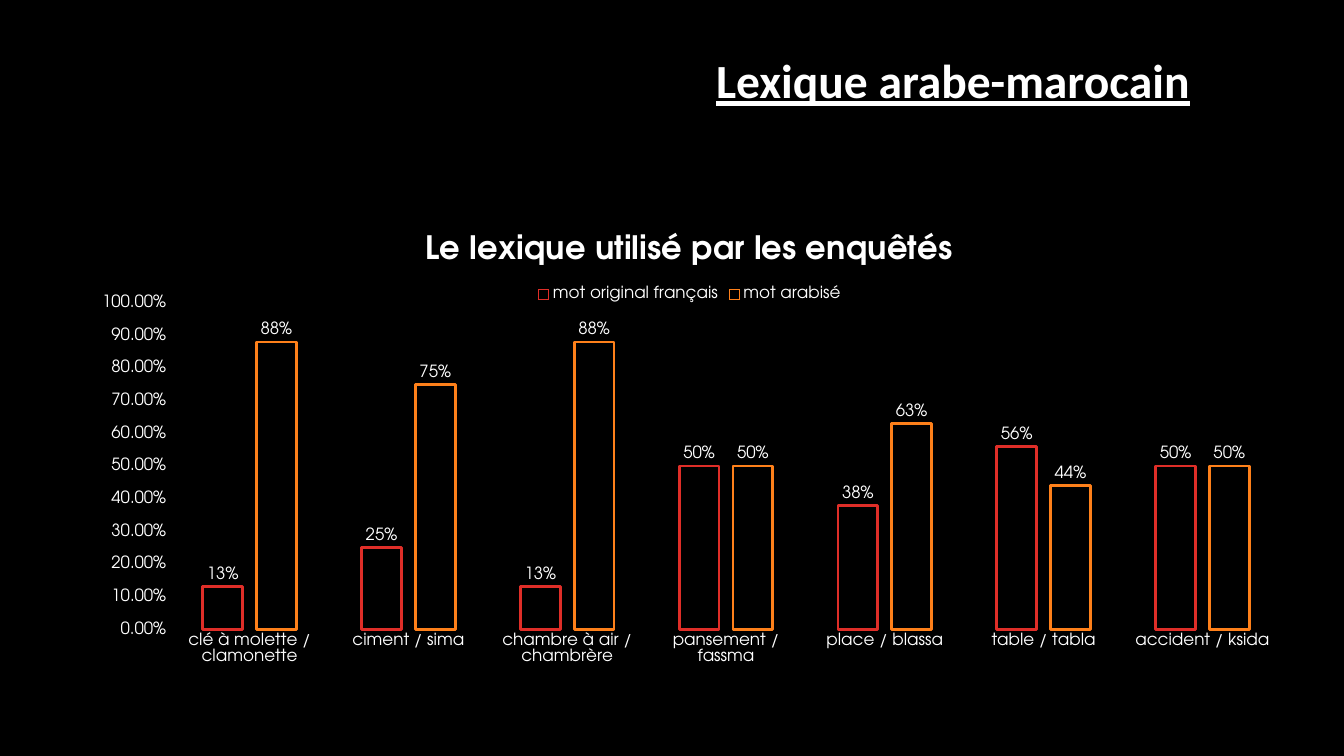
from dataclasses import dataclass

from lxml.etree import SubElement
from pptx import Presentation
from pptx.chart.data import CategoryChartData
from pptx.dml.color import RGBColor
from pptx.enum.chart import XL_CHART_TYPE as ChartType
from pptx.enum.chart import XL_LABEL_POSITION as LabelPosition
from pptx.enum.chart import XL_LEGEND_POSITION as LegendPosition
from pptx.enum.chart import XL_TICK_MARK as TickMark
from pptx.enum.text import PP_ALIGN as Align
from pptx.oxml.ns import qn
from pptx.util import Cm, Pt


@dataclass(frozen=True)
class Theme:
    background: str = "000000"
    text: str = "FFFFFF"
    french: str = "DF2E28"
    arabised: str = "FE801A"
    heading_font: str = "Calibri"
    chart_font: str = "TeX Gyre Adventor"
    heading_size: float = 34
    chart_title_size: float = 23
    label_size: float = 12
    outline: float = 2


THEME = Theme()

WORDS = [
    # word pair, share of French word, share of arabised word
    ("clé à molette / clamonette", 0.13, 0.88),
    ("ciment / sima", 0.25, 0.75),
    ("chambre à air / chambrère", 0.13, 0.88),
    ("pansement / fassma", 0.5, 0.5),
    ("place / blassa", 0.38, 0.63),
    ("table / tabla", 0.56, 0.44),
    ("accident / ksida", 0.5, 0.5),
]


def format_font(font, size, name=THEME.chart_font, bold=False, underline=None):
    font.size = Pt(size)
    font.name = name
    font.bold = bold
    if underline is not None:
        font.underline = underline
    font.color.rgb = RGBColor.from_string(THEME.text)


def write_text(frame, text, align=Align.CENTER, **font_format):
    paragraph = frame.paragraphs[0]
    paragraph.alignment = align
    run = paragraph.add_run()
    run.text = text
    format_font(run.font, **font_format)


def add_heading(slide, left, top, width, height):
    heading = slide.shapes.add_textbox(left, top, width, height).text_frame
    heading.word_wrap = True
    write_text(heading, "Lexique arabe-marocain", size=THEME.heading_size,
               name=THEME.heading_font, bold=True, underline=True)


def place_plot(chart, x, y, w, h):
    """Fix the inner plot area, as fractions of the chart."""
    plot_area = chart.plots[0]._element.getparent()
    layout = plot_area.find(qn("c:layout"))
    if layout is None:
        layout = SubElement(plot_area, qn("c:layout"))
        plot_area.insert(0, layout)
    manual = SubElement(layout, qn("c:manualLayout"))
    settings = [("layoutTarget", "inner"), ("xMode", "edge"), ("yMode", "edge"),
                ("x", x), ("y", y), ("w", w), ("h", h)]
    for tag, value in settings:
        SubElement(manual, qn(f"c:{tag}")).set("val", str(value))


def style_axes(chart):
    for axis in (chart.category_axis, chart.value_axis):
        axis.major_tick_mark = axis.minor_tick_mark = TickMark.NONE
        axis.has_major_gridlines = False
        axis.format.line.fill.background()
        format_font(axis.tick_labels.font, THEME.label_size)
    shares = chart.value_axis
    shares.minimum_scale, shares.maximum_scale = 0, 1
    shares.major_unit = 0.1
    shares.tick_labels.number_format = "0.00%"
    shares.tick_labels.number_format_is_linked = False


def style_columns(series, color):
    series.invert_if_negative = False
    series.format.fill.background()
    series.format.line.color.rgb = RGBColor.from_string(color)
    series.format.line.width = Pt(THEME.outline)
    labels = series.data_labels
    labels.show_value = True
    labels.position = LabelPosition.OUTSIDE_END
    labels.number_format = "0%"
    labels.number_format_is_linked = False
    format_font(labels.font, THEME.label_size)


def add_lexicon_chart(slide, left, top, width, height):
    pairs, french, arabised = zip(*WORDS)
    shares = CategoryChartData(number_format="0%")
    shares.categories = pairs
    shares.add_series("mot original français", french)
    shares.add_series("mot arabisé", arabised)
    chart = slide.shapes.add_chart(
        ChartType.COLUMN_CLUSTERED, left, top, width, height, shares).chart
    format_font(chart.font, THEME.label_size)

    # Title and legend
    chart.has_title = True
    write_text(chart.chart_title.text_frame, "Le lexique utilisé par les enquêtés",
               size=THEME.chart_title_size, bold=True)
    chart.chart_title.include_in_layout = False
    chart.has_legend = True
    chart.legend.position = LegendPosition.TOP
    chart.legend.include_in_layout = False
    format_font(chart.legend.font, THEME.label_size)

    # Columns and axes
    columns = chart.plots[0]
    columns.vary_by_categories = False
    columns.gap_width = 164
    columns.overlap = -35
    for series, color in zip(columns.series, (THEME.french, THEME.arabised)):
        style_columns(series, color)
    style_axes(chart)
    place_plot(chart, 0.07, 0.18, 0.92, 0.63)


def main():
    deck = Presentation()
    deck.slide_width, deck.slide_height = Cm(33.87), Cm(19.05)
    slide = deck.slides.add_slide(deck.slide_layouts[6])
    slide.background.fill.solid()
    slide.background.fill.fore_color.rgb = RGBColor.from_string(THEME.background)

    add_heading(slide, Cm(16.94), Cm(1.17), Cm(14.15), Cm(2.49))
    add_lexicon_chart(slide, Cm(2.16), Cm(5.28), Cm(30.45), Cm(13.06))
    deck.save("out.pptx")


if __name__ == "__main__":
    main()
